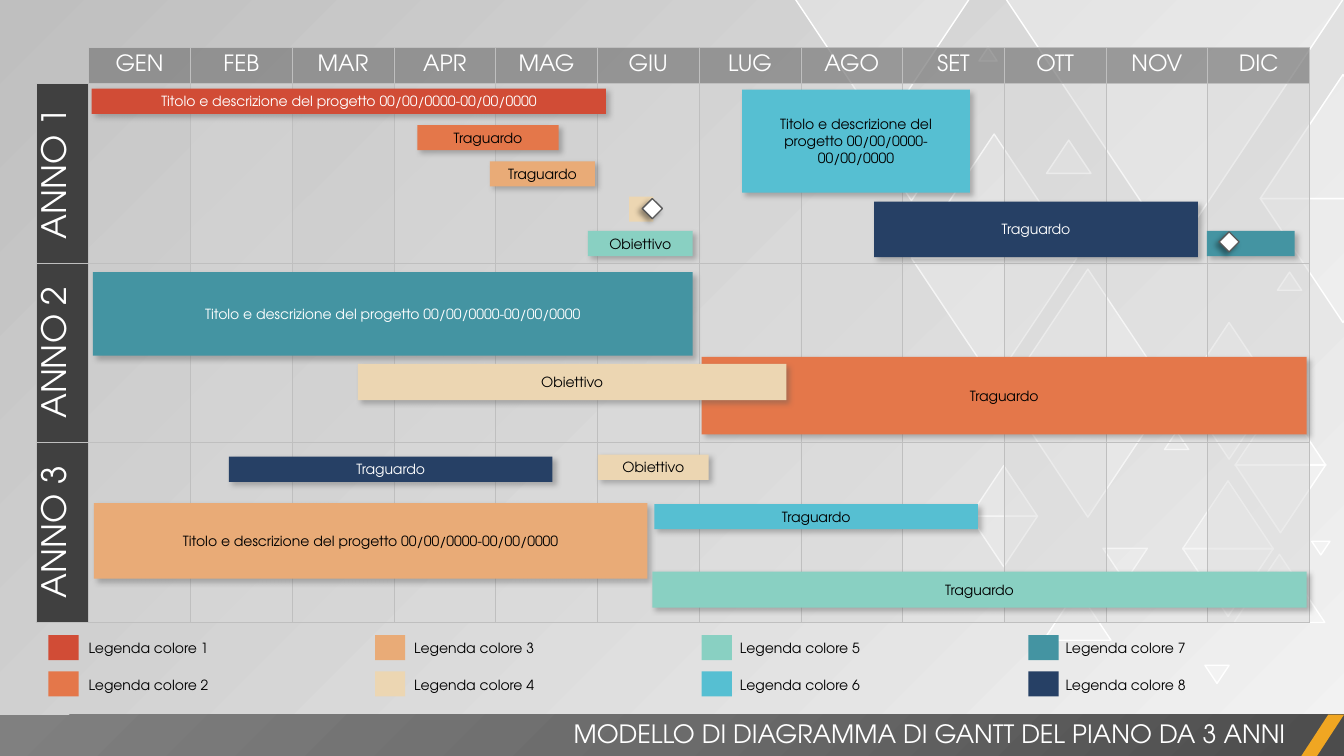
from lxml import etree
from pptx import Presentation
from pptx.dml.color import RGBColor
from pptx.enum.shapes import MSO_SHAPE
from pptx.enum.text import MSO_ANCHOR, MSO_AUTO_SIZE, PP_ALIGN
from pptx.oxml.ns import qn
from pptx.util import Inches, Pt

RECT, TRIANGLE = MSO_SHAPE.RECTANGLE, MSO_SHAPE.ISOSCELES_TRIANGLE
DIAMOND, SLANT = MSO_SHAPE.DIAMOND, MSO_SHAPE.PARALLELOGRAM
LEFT, CENTER, RIGHT = PP_ALIGN.LEFT, PP_ALIGN.CENTER, PP_ALIGN.RIGHT
TOP, MIDDLE = MSO_ANCHOR.TOP, MSO_ANCHOR.MIDDLE
GROW = MSO_AUTO_SIZE.SHAPE_TO_FIT_TEXT

FONT = "TeX Gyre Adventor"
NO_STYLE = "{2D5ABB26-0587-4C30-8999-92F81FD0307C}"
COLORS = {
    "red": "D14C36", "orange": "E4774A", "peach": "E9AB77", "sand": "ECD6B2",
    "mint": "89D0C2", "sky": "56BFD2", "teal": "4494A2", "navy": "264065",
    "white": "FFFFFF", "black": "000000", "gold": "F0A622", "outline": "595959",
    "header": "808080", "year": "404040", "month": "D9D9D9",
    "grid": "BFBFBF", "corner": "A6A6A6",
}
LEGEND = ["red", "orange", "peach", "sand", "mint", "sky", "teal", "navy"]
DARK_BARS = {"red", "teal", "navy"}
MONTHS = "GEN FEB MAR APR MAG GIU LUG AGO SET OTT NOV DIC".split()
YEARS = ["ANNO 1", "ANNO 2", "ANNO 3"]
PROJECT = "Titolo e descrizione del progetto 00/00/0000-00/00/0000"
MILESTONE, GOAL = "Traguardo", "Obiettivo"

# left, top, width, height, colour, label
BARS = [
    (0.91, 0.88, 5.1, 0.25, "red", PROJECT),
    (4.14, 1.24, 1.4, 0.25, "orange", MILESTONE),
    (4.86, 1.6, 1.04, 0.25, "peach", MILESTONE),
    (5.83, 2.29, 1.04, 0.25, "mint", GOAL),
    (7.36, 0.89, 2.26, 1.02, "sky", PROJECT),
    (0.92, 2.7, 5.95, 0.83, "teal", PROJECT),
    (8.67, 2, 3.21, 0.55, "navy", MILESTONE),
    (6.96, 3.54, 6, 0.77, "orange", MILESTONE),
    (0.93, 4.99, 5.49, 0.75, "peach", PROJECT),
    (5.93, 4.51, 1.1, 0.25, "sand", GOAL),
    (6.47, 5.67, 6.49, 0.36, "mint", MILESTONE),
    (6.49, 5, 3.21, 0.25, "sky", MILESTONE),
    (11.97, 2.29, 0.87, 0.25, "teal", ""),
    (3.55, 3.61, 4.25, 0.36, "sand", GOAL),
    (2.27, 4.53, 3.21, 0.25, "navy", MILESTONE),
]
# left, top, width
UP_TRIANGLES = [
    (9.04, 1.33, 1.64), (9.97, 2.67, 1.64), (12.24, 5.5, 0.9), (11.73, 4.77, 0.9),
    (11.74, 3.2, 0.9), (12.25, 3.94, 0.9), (10.35, 5.85, 0.67), (9.62, 4.62, 0.67),
    (12.5, 0.74, 1.64), (11.55, 4.28, 0.24), (12.67, 2.7, 0.24), (9.71, 0.47, 0.18),
    (10.38, 1.39, 0.44),
]
DOWN_TRIANGLES = [
    (9.04, 2.56, 1.64), (9.97, 3.9, 1.64), (9.97, -0.02, 3.36), (11.73, 5.44, 0.9),
    (11.74, 3.88, 0.9), (12.25, 4.61, 0.9), (9.62, 5.12, 0.67), (12.5, 1.97, 1.64),
    (10.94, 5.44, 0.44), (11.95, 6.6, 0.24), (8.92, 1.81, 0.24), (13.01, 5.37, 0.18),
    (7.88, -0.02, 1.74),
]


def rgb(name):
    return RGBColor.from_string(COLORS[name])


def child(parent, tag, **attributes):
    node = etree.SubElement(parent, qn(tag))
    for key, value in attributes.items():
        node.set(key, str(value))
    return node


def set_opacity(holder, percent):
    """Make the solid fill directly under holder partly transparent."""
    child(holder.find(qn("a:solidFill"))[0], "a:alpha", val=percent * 1000)


def use_gradient(holder, stops):
    """Swap the solid fill under holder for a gradient and return it."""
    gradient = etree.Element(qn("a:gradFill"), rotWithShape="1")
    stop_list = child(gradient, "a:gsLst")
    for position, color, opacity in stops:
        stop = child(stop_list, "a:gs", pos=position * 1000)
        child(child(stop, "a:srgbClr", val=color), "a:alpha", val=opacity * 1000)
    holder.replace(holder.find(qn("a:solidFill")), gradient)
    return gradient


def write(frame, text, size, color, align, anchor):
    frame.word_wrap = True
    frame.vertical_anchor = anchor
    paragraph = frame.paragraphs[0]
    paragraph.alignment = align
    run = paragraph.add_run()
    run.text = text
    for key, value in {"name": FONT, "size": Pt(size), "bold": False}.items():
        setattr(run.font, key, value)
    run.font.color.rgb = rgb(color)


def add_figure(shapes, kind, box, fill, line=None):
    figure = shapes.add_shape(kind, *map(Inches, box))
    figure.shadow.inherit = False
    figure.fill.solid()
    figure.fill.fore_color.rgb = rgb(fill)
    if line:
        figure.line.color.rgb = rgb(line)
        figure.line.width = Pt(1)
    else:
        figure.line.fill.background()
    return figure


def cast_shadow(figure, color, angle):
    effects = figure.element.spPr.find(qn("a:effectLst"))
    shadow = child(effects, "a:outerShdw", blurRad=Pt(4), dist=Pt(3),
                   dir=angle * 60000, algn="ctr", rotWithShape=0)
    child(child(shadow, "a:srgbClr", val=COLORS[color]), "a:alpha", val=40000)


def add_backdrop(slide):
    slide.background.fill.solid()
    holder = slide.element.find(".//" + qn("p:bgPr"))
    gradient = use_gradient(holder, [(0, "F2F2F2", 40), (100, "BFBFBF", 100)])
    child(gradient, "a:lin", ang=225 * 60000, scaled=0)
    group = slide.shapes.add_group_shape()
    for triangles, rotation in ((UP_TRIANGLES, 0), (DOWN_TRIANGLES, 180)):
        for left, top, width in triangles:
            box = (left, top, width, width * 0.75)
            triangle = add_figure(group.shapes, TRIANGLE, box, "white", "white")
            triangle.rotation = rotation
            set_opacity(triangle.element.spPr, 30)


def add_footer(slide):
    band = add_figure(slide.shapes, RECT, (0, 7.09, 13.33, 0.42), "header")
    stops = [(0, "4C4C4C", 100), (50, "6B6B6B", 100), (100, "808080", 100)]
    path = child(use_gradient(band.element.spPr, stops), "a:path", path="circle")
    child(path, "a:fillToRect", l=100000, t=100000)
    accent = add_figure(slide.shapes, SLANT, (12.9, 7.09, 0.43, 0.42), "gold")
    accent.adjustments[0] = 0.652
    title = slide.shapes.title
    place = {"left": 5.25, "top": 7.08, "width": 7.6, "height": 0.4}
    for key, value in place.items():
        setattr(title, key, Inches(value))
    write(title.text_frame, "MODELLO DI DIAGRAMMA DI GANTT DEL PIANO DA 3 ANNI",
          18, "white", RIGHT, TOP)
    title.text_frame.auto_size = GROW
    accent.element.addnext(title.element)


def set_borders(properties, colors):
    """Give borders in the order left, right, top, bottom; None hides one."""
    for index, (side, color) in enumerate(zip("LRTB", colors)):
        border = etree.Element(qn("a:ln" + side), w=str(Pt(0.5)))
        if color:
            child(child(border, "a:solidFill"), "a:srgbClr", val=COLORS[color])
        else:
            child(border, "a:noFill")
        properties.insert(index, border)


def format_cell(cell, row, column):
    borders = ["grid"] * 4
    if row == 0:
        cell.margin_top = cell.margin_bottom = 0
    if row == column == 0:
        cell.fill.background()
        set_borders(cell._tc.get_or_add_tcPr(), [None, "grid", None, "corner"])
        return
    cell.fill.solid()
    cell.fill.fore_color.rgb = rgb("header" if row == 0 else "month" if column else "year")
    properties = cell._tc.get_or_add_tcPr()
    if column:
        set_opacity(properties, 75 if row == 0 else 25 if column % 2 else 50)
    else:
        properties.set("vert", "vert270")
    set_borders(properties, borders)
    if row == 0 or column == 0:
        text, size = (MONTHS[column - 1], 16) if row == 0 else (YEARS[row - 1], 24)
        write(cell.text_frame, text, size, "white", CENTER, TOP)
        cell.vertical_anchor = MIDDLE


def add_calendar(slide):
    box = map(Inches, (0.36, 0.47, 12.63, 5.7))
    frame = slide.shapes.add_table(len(YEARS) + 1, len(MONTHS) + 1, *box)
    calendar = frame.table
    calendar.first_row = calendar.horz_banding = False
    next(frame.element.iter(qn("a:tableStyleId"))).text = NO_STYLE
    for index, column in enumerate(calendar.columns):
        column.width = Inches(12.11 / len(MONTHS) if index else 0.52)
    for index, row in enumerate(calendar.rows):
        row.height = Inches(1.78 if index else 0.36)
        for column, cell in enumerate(row.cells):
            format_cell(cell, index, column)


def add_bars(slide):
    add_figure(slide.shapes, RECT, (6.24, 1.95, 0.24, 0.25), "sand")
    for *box, color, label in BARS:
        bar = add_figure(slide.shapes, RECT, box, color)
        cast_shadow(bar, "outline", 45)
        if label:
            ink = "white" if color in DARK_BARS else "black"
            write(bar.text_frame, label, 10, ink, CENTER, MIDDLE)
    for left, top in ((6.37, 1.97), (12.09, 2.3)):
        marker = add_figure(slide.shapes, DIAMOND, (left, top, 0.2, 0.2), "white", "outline")
        cast_shadow(marker, "black", 135)


def add_legend(slide):
    for index, color in enumerate(LEGEND):
        column, row = divmod(index, 2)
        top = 6.3 + 0.36 * row
        add_figure(slide.shapes, RECT, (0.48 + 3.24 * column, top, 0.3, 0.25), color)
        box = map(Inches, (0.78 + 3.23 * column, top, 2.4, 0.27))
        label = slide.shapes.add_textbox(*box).text_frame
        write(label, f"Legenda colore {index + 1}", 10, "black", LEFT, TOP)
        label.auto_size = GROW


def main():
    deck = Presentation()
    deck.slide_width, deck.slide_height = Inches(13.33), Inches(7.5)
    slide = deck.slides.add_slide(deck.slide_layouts[5])
    add_backdrop(slide)
    add_footer(slide)
    add_calendar(slide)
    add_bars(slide)
    add_legend(slide)
    deck.save("out.pptx")


if __name__ == "__main__":
    main()
